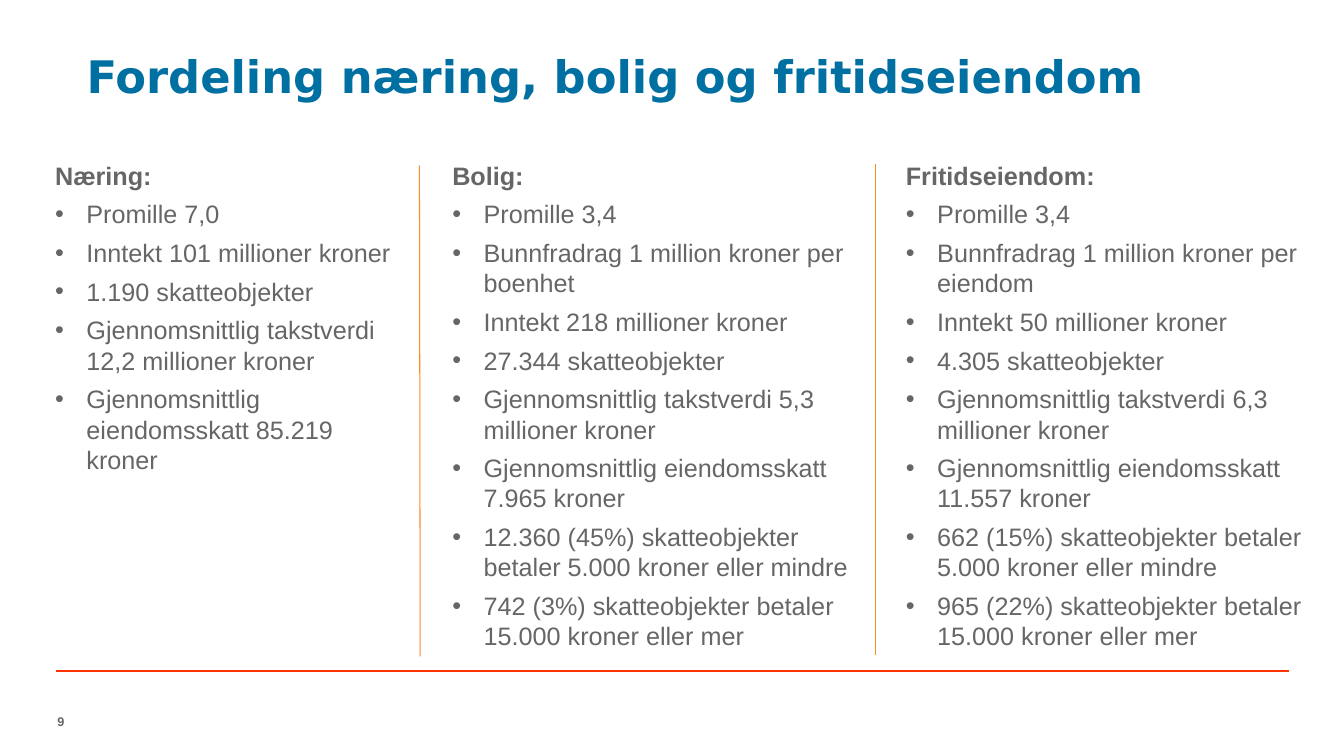
from lxml import etree
from pptx import Presentation
from pptx.dml.color import RGBColor
from pptx.enum.shapes import MSO_CONNECTOR
from pptx.enum.text import MSO_ANCHOR, PP_ALIGN
from pptx.oxml.ns import qn
from pptx.util import Cm, Pt

STRAIGHT = MSO_CONNECTOR.STRAIGHT
TOP = MSO_ANCHOR.TOP
LEFT = PP_ALIGN.LEFT

COLORS = {"title": "006FA2", "text": "666666", "rule": "FF3300", "divider": "F98D29"}
FORMATS = {
    "title": {"name": "DejaVu Sans", "size": Pt(32), "bold": True},
    "heading": {"name": "Arial", "size": Pt(18), "bold": True},
    "bullet": {"name": "Arial", "size": Pt(18), "bold": False},
    "number": {"name": "Arial", "size": Pt(9), "bold": True},
}
NO_MARGINS = dict.fromkeys(("margin_left", "margin_right", "margin_top", "margin_bottom"), 0)
COLUMN_TOP = 3.91
COLUMNS = [
    (1.14, 9.22, 12.07, "Næring:", [
        "Promille 7,0",
        "Inntekt 101 millioner kroner",
        "1.190 skatteobjekter",
        "Gjennomsnittlig takstverdi \n12,2 millioner kroner",
        "Gjennomsnittlig eiendomsskatt 85.219 kroner",
    ]),
    (11.15, 10.69, 12.93, "Bolig:", [
        "Promille 3,4",
        "Bunnfradrag 1 million kroner per boenhet",
        "Inntekt 218 millioner kroner",
        "27.344 skatteobjekter",
        "Gjennomsnittlig takstverdi 5,3 millioner kroner",
        "Gjennomsnittlig eiendomsskatt 7.965 kroner",
        "12.360 (45%) skatteobjekter betaler 5.000 kroner eller mindre",
        "742 (3%) skatteobjekter betaler 15.000 kroner eller mer",
    ]),
    (22.58, 10.57, 12.93, "Fritidseiendom:", [
        "Promille 3,4",
        "Bunnfradrag 1 million kroner per eiendom",
        "Inntekt 50 millioner kroner",
        "4.305 skatteobjekter",
        "Gjennomsnittlig takstverdi 6,3 millioner kroner",
        "Gjennomsnittlig eiendomsskatt 11.557 kroner",
        "662 (15%) skatteobjekter betaler 5.000 kroner eller mindre",
        "965 (22%) skatteobjekter betaler 15.000 kroner eller mer",
    ]),
]
DIVIDERS = [(10.57, 4.17, 10.59, 16.54), (22.07, 4.14, 22.07, 16.51)]


def apply(target, values):
    for name, value in values.items():
        setattr(target, name, value)


class SlideBuilder:
    def __init__(self, presentation):
        self.slide = presentation.slides.add_slide(presentation.slide_layouts[5])

    def fill_paragraph(self, paragraph, text, style, color="text"):
        paragraph.text = text
        paragraph.alignment = LEFT
        for run in paragraph.runs:
            apply(run.font, FORMATS[style])
            run.font.color.rgb = RGBColor.from_string(COLORS[color])

    def title(self, text, left, top, width, height):
        shape = self.slide.shapes.title
        apply(shape, {"left": Cm(left), "top": Cm(top), "width": Cm(width), "height": Cm(height)})
        apply(shape.text_frame, {**NO_MARGINS, "word_wrap": True, "vertical_anchor": TOP})
        self.fill_paragraph(shape.text_frame.paragraphs[0], text, "title", "title")

    def text_box(self, left, top, width, height):
        shape = self.slide.shapes.add_textbox(Cm(left), Cm(top), Cm(width), Cm(height))
        shape.text_frame.word_wrap = True
        return shape.text_frame

    def number(self, text, left, top, width, height):
        frame = self.text_box(left, top, width, height)
        apply(frame, NO_MARGINS)
        self.fill_paragraph(frame.paragraphs[0], text, "number")

    def column(self, left, width, height, heading, items):
        frame = self.text_box(left, COLUMN_TOP, width, height)
        self.fill_paragraph(frame.paragraphs[0], heading, "heading")
        for item in items:
            self.bullet(frame.add_paragraph(), item)
        for paragraph in frame.paragraphs:
            paragraph.space_after = Pt(6)

    def bullet(self, paragraph, text):
        properties = paragraph._p.get_or_add_pPr()
        properties.set("marL", str(Cm(0.79)))
        properties.set("indent", str(-Cm(0.79)))
        etree.SubElement(properties, qn("a:buFont"), typeface="Arial")
        etree.SubElement(properties, qn("a:buChar"), char="•")
        self.fill_paragraph(paragraph, text, "bullet")

    def line(self, start_x, start_y, end_x, end_y, color, width):
        connector = self.slide.shapes.add_connector(
            STRAIGHT, Cm(start_x), Cm(start_y), Cm(end_x), Cm(end_y))
        connector.line.color.rgb = RGBColor.from_string(COLORS[color])
        connector.line.width = Pt(width)
        etree.SubElement(connector._element.spPr, qn("a:effectLst"))


def main():
    presentation = Presentation()
    presentation.slide_width = Cm(33.87)
    presentation.slide_height = Cm(19.05)
    builder = SlideBuilder(presentation)
    builder.line(1.4, 16.92, 32.49, 16.92, "rule", 1.42)
    builder.title("Fordeling næring, bolig og fritidseiendom", 2.18, 1.22, 29.87, 2.21)
    builder.number("9", 1.45, 17.98, 7.9, 0.43)
    for column in COLUMNS:
        builder.column(*column)
    for divider in DIVIDERS:
        builder.line(*divider, "divider", 0.75)
    presentation.save("out.pptx")


if __name__ == "__main__":
    main()
